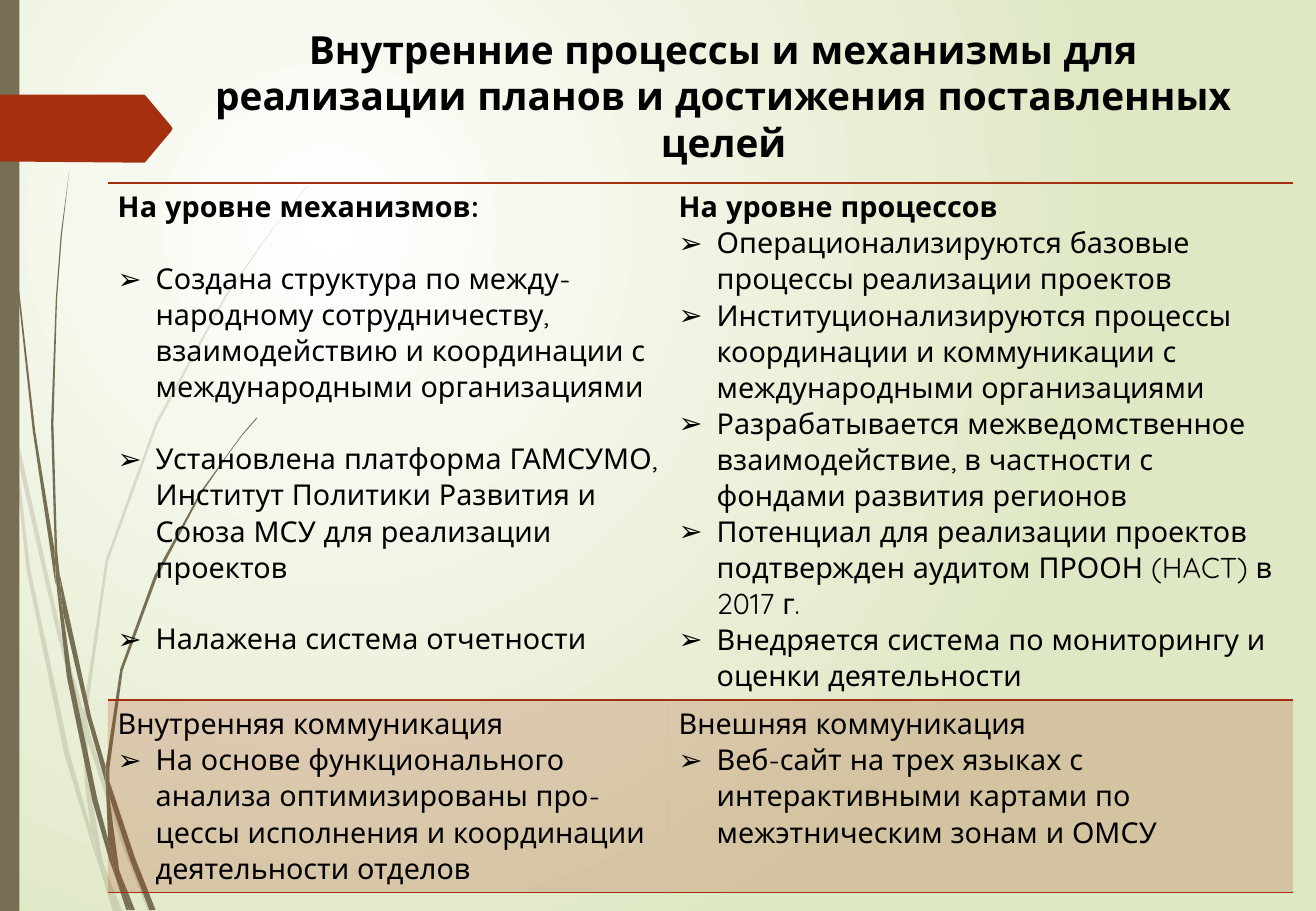
from lxml.etree import SubElement
from pptx import Presentation
from pptx.dml.color import RGBColor
from pptx.enum.shapes import MSO_SHAPE as Shape
from pptx.enum.text import MSO_ANCHOR as Anchor, PP_ALIGN as Align
from pptx.oxml import parse_xml
from pptx.oxml.ns import nsdecls, qn
from pptx.util import Pt

FONT = "Quicksand"
COLORS = {"white": "FFFFFF", "lime": "DFE8C4", "olive": "766F54",
          "rust": "A53010", "black": "000000"}
OUTLINE_UNIT = Pt(0.72)
BULLET_INDENT = 22.5
BLANK_LINE = 21.25
PALE = 20

PALE_GRASS = [
    [(9, 350), (7, 322), (0, 282), (0, 299), (8, 344)],
    [(47, 522), (68, 599), (69, 586), (50, 520), (11, 345), (14, 376)],
    [(75, 607), (72, 596), (72, 610), (100, 694), (122, 751), (126, 751), (103, 692)],
    [(97, 751), (101, 751), (85, 711)],
    [(75, 683), (57, 619), (25, 469), (14, 376), (9, 350), (22, 470), (53, 621),
     (75, 693), (82, 714), (80, 707)],
    [(68, 599), (70, 646), (75, 683), (78, 692), (85, 711), (84, 706), (74, 646),
     (72, 610), (71, 608)],
    [(72, 584), (89, 462), (130, 349), (186, 245), (218, 198), (235, 175), (253, 154),
     (253, 153), (235, 175), (218, 197), (185, 244), (128, 348), (87, 461), (69, 584),
     (69, 586), (72, 596)],
    [(82, 714), (93, 751), (96, 751)],
    [(71, 608), (72, 610), (72, 596), (69, 586), (68, 599)],
    [(78, 692), (76, 683), (80, 707), (82, 714), (96, 751), (97, 751), (85, 711)],
]
DARK_GRASS = [
    [(5, 110), (14, 233), (27, 355), (45, 477), (46, 481), (45, 457), (45, 453),
     (29, 355), (15, 232), (6, 109), (4, 48), (3, 0), (2, 0), (3, 48)],
    [(72, 592), (87, 645), (87, 633), (87, 631), (75, 590), (49, 472), (52, 505)],
    [(92, 649), (89, 641), (90, 656), (107, 708), (123, 749), (128, 749), (111, 706)],
    [(89, 691), (80, 657), (59, 556), (52, 505), (46, 477), (55, 557), (76, 659),
     (90, 708), (95, 722), (94, 717)],
    [(49, 472), (47, 453), (44, 349), (47, 245), (51, 193), (57, 141), (50, 193),
     (46, 245), (42, 349), (45, 449), (48, 472)],
    [(108, 749), (111, 749), (99, 719)],
    [(46, 477), (52, 505), (49, 472), (45, 449), (45, 453)],
    [(90, 633), (101, 552), (129, 476), (166, 406), (188, 374), (199, 359), (212, 344),
     (211, 344), (199, 358), (188, 373), (165, 405), (127, 474), (99, 551), (87, 631),
     (90, 641)],
    [(95, 722), (104, 749), (106, 749)],
    [(87, 645), (89, 691), (94, 706), (99, 719), (98, 716), (90, 656), (88, 651)],
    [(87, 645), (88, 651), (90, 656), (90, 641), (87, 631), (87, 633)],
    [(94, 706), (89, 691), (94, 717), (95, 722), (106, 749), (108, 749), (99, 719)],
]
TAG = [(0, 78), (119, 78), (120, 79), (141, 104), (141.5, 106), (141, 108),
       (120, 133), (119, 134), (0, 133)]

TITLE = "Внутренние процессы и механизмы для реализации планов и достижения поставленных целей"
CELLS = [
    [("На уровне механизмов:", True, BLANK_LINE, [
        "Создана структура по между-народному сотрудничеству, взаимодействию и координации с международными организациями",
        "Установлена платформа ГАМСУМО, Институт Политики Развития и Союза МСУ для реализации проектов",
        "Налажена система отчетности"]),
     ("На уровне процессов", True, 0, [
         "Операционализируются базовые процессы реализации проектов",
         "Институционализируются процессы координации и коммуникации с международными организациями",
         "Разрабатывается межведомственное взаимодействие, в частности с фондами развития регионов",
         "Потенциал для реализации проектов подтвержден аудитом ПРООН (HACT) в 2017 г.",
         "Внедряется система по мониторингу и оценки деятельности"])],
    [("Внутренняя коммуникация", False, 0, [
        "На основе функционального анализа оптимизированы про-цессы исполнения и координации деятельности отделов"]),
     ("Внешняя коммуникация", False, 0, [
         "Веб-сайт на трех языках с интерактивными картами по межэтническим зонам и ОМСУ"])],
]


def paint(fill, color, opacity=100):
    fill.solid()
    fill.fore_color.rgb = RGBColor.from_string(COLORS[color])
    if opacity < 100:
        tint = fill.fore_color._xFill.find(qn("a:srgbClr"))
        SubElement(tint, qn("a:alpha")).set("val", str(opacity * 1000))


def finish(shape, color, opacity=100):
    shape.shadow.inherit = False
    paint(shape.fill, color, opacity)
    shape.line.fill.background()


def add_outline(shapes, points, color, opacity=100):
    builder = shapes.build_freeform(*points[0], scale=OUTLINE_UNIT)
    builder.add_line_segments(points[1:], close=True)
    finish(builder.convert_to_shape(), color, opacity)


def add_grass(page, blades, opacity):
    group = page.shapes.add_group_shape()
    for blade in blades:
        add_outline(group.shapes, blade, "olive", opacity)


def add_span(para, text, size, bold):
    span = para.add_run()
    span.text = text
    span.font.name = FONT
    span.font.size = Pt(size)
    span.font.bold = bold
    span.font.color.rgb = RGBColor.from_string(COLORS["black"])


def add_bullet(frame, text, gap):
    para = frame.add_paragraph()
    para.space_before = Pt(gap)
    props = para._p.get_or_add_pPr()
    props.set("marL", str(Pt(BULLET_INDENT)))
    props.set("indent", str(-Pt(BULLET_INDENT)))
    SubElement(props, qn("a:buFont")).set("typeface", "Arial")
    SubElement(props, qn("a:buChar")).set("char", "➢")
    add_span(para, text, 17, False)


def add_border(cell, side):
    cell._tc.get_or_add_tcPr().insert(0, parse_xml(
        f'<a:{side} {nsdecls("a")} w="{Pt(1)}"><a:solidFill>'
        f'<a:srgbClr val="{COLORS["rust"]}"/></a:solidFill></a:{side}>'))


def fill_cell(cell, heading, bold, gap, bullets):
    cell.margin_left = cell.margin_right = Pt(5.8)
    cell.margin_top = cell.margin_bottom = Pt(3.6)
    add_span(cell.text_frame.paragraphs[0], heading, 17, bold)
    for text in bullets:
        add_bullet(cell.text_frame, text, gap)


def add_levels_table(page):
    table = page.shapes.add_table(2, 2, Pt(64), Pt(108.5), Pt(702.5), Pt(372)).table
    table.first_row = table.horz_banding = False
    table._tbl.tblPr.find(qn("a:tableStyleId")).text = "{2D5ABB26-0587-4C30-8999-92F81FD0307C}"
    for column, width in zip(table.columns, (332.5, 370)):
        column.width = Pt(width)
    for row, height in zip(table.rows, (265.5, 106.5)):
        row.height = Pt(height)
    for row_index, row in enumerate(CELLS):
        for column_index, content in enumerate(row):
            cell = table.cell(row_index, column_index)
            fill_cell(cell, *content)
            add_border(cell, "lnB")
            if row_index:
                paint(cell.fill, "rust", PALE)
            else:
                add_border(cell, "lnT")
                cell.fill.background()


def set_background(page):
    fill = page.background.fill
    fill.gradient()
    for stop, color in zip(fill.gradient_stops, ("white", "lime")):
        stop.color.rgb = RGBColor.from_string(COLORS[color])
    gradient = page.element.find(".//" + qn("a:gradFill"))
    gradient.replace(gradient.find(qn("a:lin")), parse_xml(
        f'<a:path {nsdecls("a")} path="circle">'
        '<a:fillToRect l="50000" t="50000" r="100000" b="100000"/></a:path>'))


def set_title(page):
    title = page.shapes.title
    title.left, title.top, title.width, title.height = Pt(108), Pt(11.5), Pt(642), Pt(63.5)
    title.element.getparent().append(title.element)
    frame = title.text_frame
    frame.word_wrap = True
    frame.vertical_anchor = Anchor.TOP
    para = frame.paragraphs[0]
    para.alignment = Align.CENTER
    add_span(para, TITLE, 23, True)


def main():
    deck = Presentation()
    deck.slide_width, deck.slide_height = Pt(780), Pt(540)
    page = deck.slides.add_slide(deck.slide_layouts[5])
    set_background(page)
    add_grass(page, PALE_GRASS, PALE)
    add_grass(page, DARK_GRASS, 100)
    bar = page.shapes.add_shape(Shape.RECTANGLE, 0, 0, Pt(11.5), Pt(540))
    finish(bar, "olive")
    add_outline(page.shapes, TAG, "rust")
    set_title(page)
    add_levels_table(page)
    deck.save("out.pptx")


if __name__ == "__main__":
    main()
